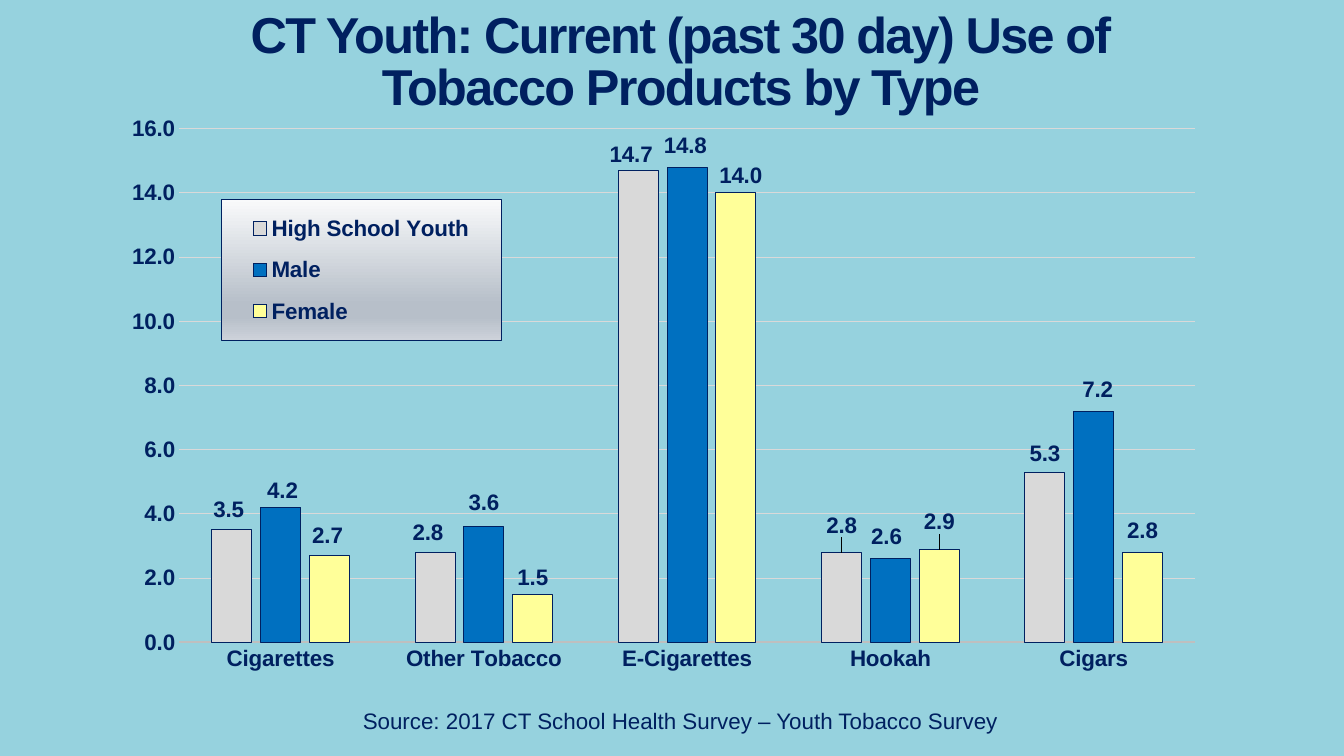
from lxml import etree
from pptx import Presentation
from pptx.chart.data import CategoryChartData
from pptx.dml.color import RGBColor
from pptx.enum.chart import XL_CHART_TYPE, XL_LABEL_POSITION, XL_LEGEND_POSITION, XL_TICK_MARK
from pptx.enum.text import MSO_ANCHOR, PP_ALIGN
from pptx.util import Cm, Pt

COLUMN = XL_CHART_TYPE.COLUMN_CLUSTERED
OUTER = XL_LABEL_POSITION.OUTSIDE_END
TOP = XL_LEGEND_POSITION.TOP
NO_TICK = XL_TICK_MARK.NONE
MIDDLE, CENTER = MSO_ANCHOR.MIDDLE, PP_ALIGN.CENTER

COLORS = {"sky": "96D2DE", "navy": "002060", "gray": "D9D9D9", "blue": "0070C0",
          "yellow": "FFFF99", "axis": "BFBFBF"}
BOLD = {"name": "Arial", "size": Pt(16), "bold": True}
PLAIN = {**BOLD, "bold": False}
HEAD = {**BOLD, "size": Pt(36)}
NS = ('xmlns:c="http://schemas.openxmlformats.org/drawingml/2006/chart" '
      'xmlns:a="http://schemas.openxmlformats.org/drawingml/2006/main"')

TYPES = ["Cigarettes", "Other Tobacco", "E-Cigarettes", "Hookah", "Cigars"]
# Name, colour, values, label shifts in millimetres
GROUPS = [
    ("High School Youth", "gray", [3.5, 2.8, 14.7, 2.8, 5.3],
     [(-0.8, -1), (-1.8, -1), (-1.8, 0), (0, -2.8), (0, -0.5)]),
    ("Male", "blue", [4.2, 3.6, 14.8, 2.6, 7.2],
     [(0.5, -0.2), (0, -2), (-0.5, -1.5), (-1, -1.5), (1, -1.5)]),
    ("Female", "yellow", [2.7, 1.5, 14, 2.9, 2.8],
     [(-0.5, -1), (0, 0), (1.2, -0.2), (0, -2.8), (0, -1.5)]),
]
# Legend gradient: position in percent, colour
STOPS = [(0, "F9FAFB"), (74, "B7BFC9"), (83, "B7BFC9"), (100, "CDD2DA")]


def color(key):
    return RGBColor.from_string(COLORS[key])


def style(font, form):
    for key, value in form.items():
        setattr(font, key, value)
    font.color.rgb = color("navy")


def outline(line, key, width):
    line.color.rgb = color(key)
    line.width = Pt(width)


def node(text):
    """Build one chart element from its markup."""
    start, rest = text.split(">", 1)
    return etree.fromstring(f"{start} {NS}>{rest}")


def layout(x, y, w=None, h=None, inner=False):
    """Build a manual layout; without a size, x and y are shifts."""
    parts = [("layoutTarget", "inner")] if inner else []
    if w is not None:
        parts += [("xMode", "edge"), ("yMode", "edge")]
    parts += [("x", x), ("y", y)]
    if w is not None:
        parts += [("w", w), ("h", h)]
    body = "".join(f'<c:{tag} val="{value}"/>' for tag, value in parts)
    return node(f"<c:layout><c:manualLayout>{body}</c:manualLayout></c:layout>")


def add_text(slide, box, text, form, space=None, track=None):
    frame = slide.shapes.add_textbox(*map(Cm, box)).text_frame
    frame.word_wrap = True
    frame.vertical_anchor = MIDDLE
    para = frame.paragraphs[0]
    para.text = text
    para.alignment = CENTER
    if space:
        para.line_spacing = space
    for run in para.runs:
        style(run.font, form)
        if track:
            run.font._element.set("spc", str(track))


def set_axes(chart):
    base, scale = chart.category_axis, chart.value_axis
    for axis in (base, scale):
        axis.major_tick_mark = axis.minor_tick_mark = NO_TICK
        style(axis.tick_labels.font, BOLD)
    outline(base.format.line, "axis", 1.5)
    scale.format.line.fill.background()
    for key, value in {"minimum_scale": 0, "maximum_scale": 16, "major_unit": 2}.items():
        setattr(scale, key, value)
    scale.has_major_gridlines = True
    outline(scale.major_gridlines.format.line, "gray", 0.75)
    scale.tick_labels.number_format = "0.0"
    scale.tick_labels.number_format_is_linked = False


def set_bars(series, fill, shifts, size):
    series.format.fill.solid()
    series.format.fill.fore_color.rgb = color(fill)
    outline(series.format.line, "navy", 0.75)
    labels = series.data_labels
    labels.show_value = True
    labels.number_format = "0.0"
    labels.number_format_is_linked = False
    labels.position = OUTER
    style(labels.font, BOLD)
    # Nudge each label from its place above the bar
    for i in range(len(shifts)):
        label = series.points[i].data_label
        style(label.font, BOLD)
        label.position = OUTER
    for item, (dx, dy) in zip(series._element.xpath("c:dLbls/c:dLbl"), shifts):
        item.insert(1, layout(round(dx / 10 / size[0], 4), round(dy / 10 / size[1], 4)))
        item.insert(2, node('<c:numFmt formatCode="0.0" sourceLinked="0"></c:numFmt>'))


def set_legend(chart):
    chart.has_legend = True
    legend = chart.legend
    legend.position = TOP
    legend.include_in_layout = False
    style(legend.font, BOLD)
    root = legend._element
    for old in root.xpath("c:layout"):
        root.remove(old)
    root.xpath("c:legendPos")[0].addnext(layout(0.11, 0.15, 0.245, 0.248))
    stops = "".join(f'<a:gs pos="{at * 1000}"><a:srgbClr val="{tint}"/></a:gs>'
                    for at, tint in STOPS)
    root.xpath("c:overlay")[0].addnext(node(
        f'<c:spPr><a:gradFill><a:gsLst>{stops}</a:gsLst><a:lin ang="5400000"/></a:gradFill>'
        f'<a:ln w="9525"><a:solidFill><a:srgbClr val="{COLORS["navy"]}"/></a:solidFill></a:ln>'
        '</c:spPr>'))


def add_bars(slide, box):
    data = CategoryChartData(number_format="0.0")
    data.categories = TYPES
    for name, _, values, _ in GROUPS:
        data.add_series(name, values)
    chart = slide.shapes.add_chart(COLUMN, *map(Cm, box), data).chart
    chart.has_title = False
    style(chart.font, BOLD)
    plot = chart.plots[0]
    for key, value in {"gap_width": 164, "overlap": -22, "vary_by_categories": False}.items():
        setattr(plot, key, value)
    set_axes(chart)
    for series, (_, fill, _, shifts) in zip(plot.series, GROUPS):
        set_bars(series, fill, shifts, box[2:])
    set_legend(chart)
    area = chart._chartSpace.xpath("c:chart/c:plotArea")[0]
    for old in area.xpath("c:layout"):
        area.remove(old)
    area.insert(0, layout(0.073, 0.026, 0.89, 0.902, inner=True))


def main():
    deck = Presentation()
    deck.slide_width, deck.slide_height = Cm(33.87), Cm(19.05)
    slide = deck.slides.add_slide(deck.slide_layouts[6])
    slide.background.fill.solid()
    slide.background.fill.fore_color.rgb = color("sky")
    # Title
    add_text(slide, (3.1, 0, 28.12, 3.23),
             "CT Youth: Current (past 30 day) Use of\vTobacco Products by Type",
             HEAD, space=0.85, track=-120)
    # Chart
    add_bars(slide, (2.41, 2.87, 28.78, 14.35))
    # Source line
    add_text(slide, (7.95, 17.68, 18.39, 0.94),
             "Source: 2017 CT School Health Survey – Youth Tobacco Survey", PLAIN)
    deck.save("out.pptx")


if __name__ == "__main__":
    main()
